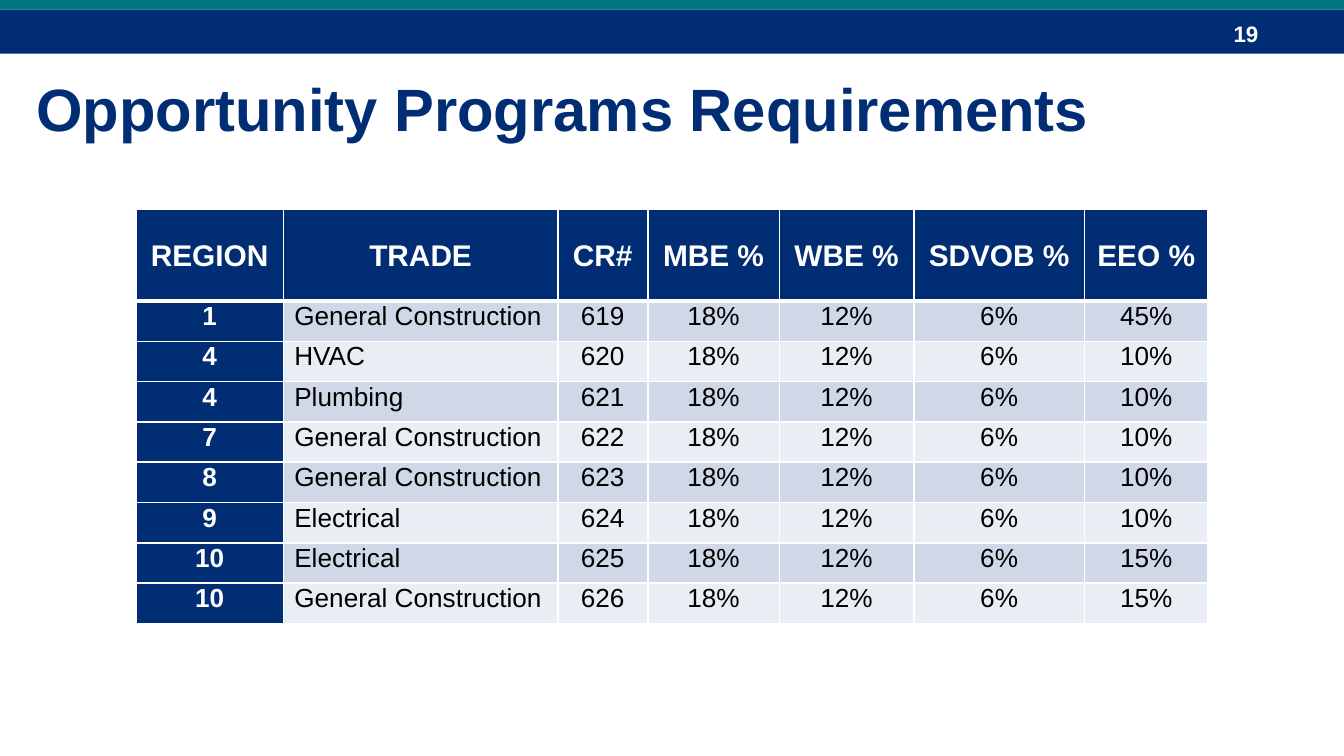
from pptx import Presentation
from pptx.dml.color import RGBColor
from pptx.enum.shapes import MSO_SHAPE
from pptx.enum.text import MSO_ANCHOR, MSO_AUTO_SIZE, PP_ALIGN
from pptx.oxml.ns import qn
from pptx.util import Inches, Pt
from lxml.etree import SubElement

COLORS = {
    "navy": "002D73",
    "teal": "007681",
    "white": "FFFFFF",
    "black": "000000",
    "band_dark": "D0D8E8",
    "band_light": "E9EDF4",
}
HEADERS = ["REGION", "TRADE", "CR#", "MBE %", "WBE %", "SDVOB %", "EEO %"]
PROJECTS = [
    ("1", "General Construction", "45%"),
    ("4", "HVAC", "10%"),
    ("4", "Plumbing", "10%"),
    ("7", "General Construction", "10%"),
    ("8", "General Construction", "10%"),
    ("9", "Electrical", "10%"),
    ("10", "Electrical", "15%"),
    ("10", "General Construction", "15%"),
]
FIRST_CR = 619
GOALS = ["18%", "12%", "6%"]
COL_WIDTHS = [1.1, 2.04, 0.67, 0.98, 1, 1.27, 0.92]
HEADER_HEIGHT = 0.68


def rgb(name):
    return RGBColor.from_string(COLORS[name])


def set_attrs(obj, values):
    for name, value in values.items():
        setattr(obj, name, value)


def write(tf, text, size, color, bold=True, align=PP_ALIGN.LEFT, **spacing):
    p = tf.paragraphs[0]
    set_attrs(p, {"alignment": align, **spacing})
    r = p.add_run()
    r.text = text
    set_attrs(r.font, {"name": "Arial", "size": Pt(size), "bold": bold})
    r.font.color.rgb = rgb(color)


def add_band(s, x, y, w, h, color):
    sp = s.shapes.add_shape(MSO_SHAPE.RECTANGLE, Inches(x), Inches(y), Inches(w), Inches(h))
    sp.shadow.inherit = False
    sp.fill.solid()
    sp.fill.fore_color.rgb = rgb(color)
    sp.line.fill.background()


def add_banner(s, x, y, w, number):
    add_band(s, x, y + 0.09, w, 0.33, "navy")
    add_band(s, x, y, w, 0.09, "teal")
    sp = s.shapes.add_textbox(Inches(x + 9.08), Inches(y + 0.12), Inches(0.75), Inches(0.3))
    set_attrs(sp.text_frame, {"word_wrap": True, "vertical_anchor": MSO_ANCHOR.MIDDLE})
    write(sp.text_frame, number, 12, "white")


def add_title(s, x, y, w, h, text):
    sp = s.shapes.title
    set_attrs(sp, {"left": Inches(x), "top": Inches(y), "width": Inches(w), "height": Inches(h)})
    set_attrs(sp.text_frame, {
        "word_wrap": True,
        "auto_size": MSO_AUTO_SIZE.NONE,
        "vertical_anchor": MSO_ANCHOR.MIDDLE,
    })
    write(sp.text_frame, text, 32, "navy")


def set_borders(cell, top=1, bottom=1):
    tc_pr = cell._tc.get_or_add_tcPr()
    for side, width in (("L", 1), ("R", 1), ("T", top), ("B", bottom)):
        ln = SubElement(tc_pr, qn(f"a:ln{side}"), w=str(Pt(width)))
        SubElement(SubElement(ln, qn("a:solidFill")), qn("a:srgbClr"), val=COLORS["white"])


def format_cell(cell, text, row, col):
    header = row == 0
    strong = header or col == 0
    set_attrs(cell, {
        "margin_left": Inches(0.08),
        "margin_right": Inches(0.08),
        "margin_top": 0,
        "margin_bottom": 0,
        "vertical_anchor": MSO_ANCHOR.MIDDLE if header else MSO_ANCHOR.TOP,
    })
    set_borders(cell, top=3 if row == 1 else 1, bottom=3 if header else 1)
    band = "band_dark" if row % 2 else "band_light"
    cell.fill.solid()
    cell.fill.fore_color.rgb = rgb("navy" if strong else band)
    write(
        cell.text_frame, text,
        size=16 if header else 14,
        color="white" if strong else "black",
        bold=strong,
        align=PP_ALIGN.LEFT if col == 1 and not header else PP_ALIGN.CENTER,
        line_spacing=1.07 if header else 1.03,
        space_after=Pt(0 if header else 0.1),
    )


def add_requirements(s, x, y, w, h):
    rows = [HEADERS] + [
        [region, trade, str(FIRST_CR + i), *GOALS, eeo]
        for i, (region, trade, eeo) in enumerate(PROJECTS)
    ]
    frame = s.shapes.add_table(
        len(rows), len(HEADERS), Inches(x), Inches(y), Inches(w), Inches(h))
    table = frame.table
    for column, width in zip(table.columns, COL_WIDTHS):
        column.width = Inches(width)
    body_height = (h - HEADER_HEIGHT) / len(PROJECTS)
    for i, values in enumerate(rows):
        table.rows[i].height = Inches(body_height if i else HEADER_HEIGHT)
        for j, text in enumerate(values):
            format_cell(table.cell(i, j), text, i, j)


def main():
    prs = Presentation()
    width = Inches(10)
    set_attrs(prs, {"slide_width": width, "slide_height": width * 9 // 16})
    s = prs.slides.add_slide(prs.slide_layouts[5])
    add_banner(s, 0, -0.02, 10, "19")
    add_title(s, 0.17, 0.48, 9.5, 0.64, "Opportunity Programs Requirements")
    add_requirements(s, 1.01, 1.56, sum(COL_WIDTHS), 3.08)
    prs.save("out.pptx")


if __name__ == "__main__":
    main()
